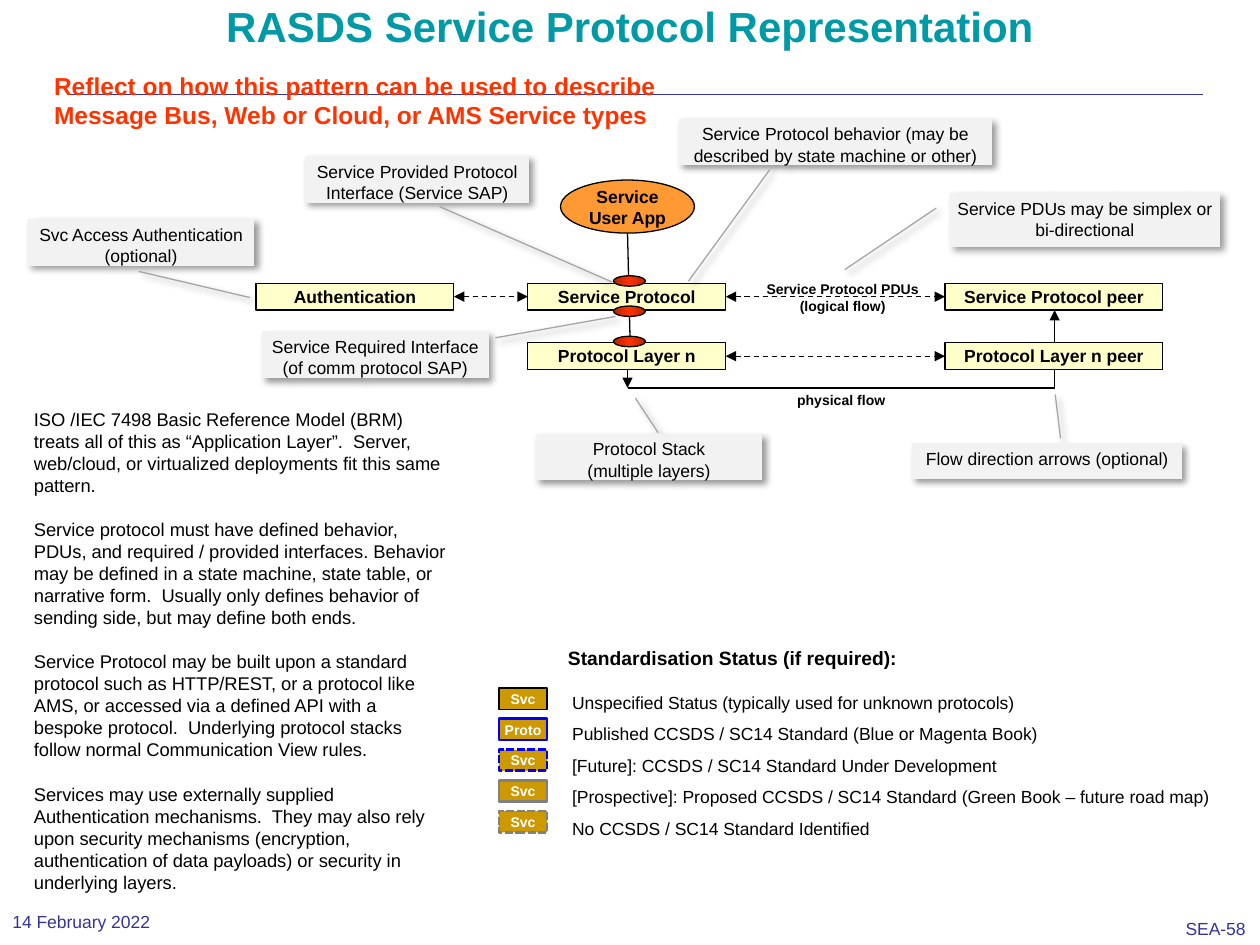
import copy

import pptx
import pptx.dml.color
import pptx.enum.dml
import pptx.enum.shapes
import pptx.enum.text
import pptx.oxml
import pptx.oxml.ns
import pptx.oxml.xmlchemy
import pptx.util

Cm, Pt = pptx.util.Cm, pptx.util.Pt
SHAPE = pptx.enum.shapes.MSO_SHAPE
DASH = pptx.enum.dml.MSO_LINE.DASH
SHORT_DASH = pptx.enum.dml.MSO_LINE.SQUARE_DOT
ALIGN = pptx.enum.text.PP_ALIGN
ANCHOR = pptx.enum.text.MSO_ANCHOR
qn = pptx.oxml.ns.qn
new_element = pptx.oxml.xmlchemy.OxmlElement

COLORS = {
    "teal": "0099A6", "red": "FF3300", "dark_red": "B62400", "navy": "333399",
    "black": "000000", "white": "FFFFFF", "cream": "FFFFCC", "gold": "CC9900",
    "orange": "FF9933", "blue": "0000FF", "gray": "808080",
    "callout": "F2F2F2", "leader": "A6A6A6",
}

TITLE = "RASDS Service Protocol Representation"
NOTES = [
    "ISO /IEC 7498 Basic Reference Model (BRM) treats all of this as “Application Layer”.  Server, web/cloud, or virtualized deployments fit this same pattern.",
    "Service protocol must have defined behavior, PDUs, and required / provided interfaces. Behavior may be defined in a state machine, state table, or narrative form.  Usually only defines behavior of sending side, but may define both ends.",
    "Service Protocol may be built upon a standard protocol such as HTTP/REST, or a protocol like AMS, or accessed via a defined API with a bespoke protocol.  Underlying protocol stacks follow normal Communication View rules.",
    "Services may use externally supplied Authentication mechanisms.  They may also rely upon security mechanisms (encryption, authentication of data payloads) or security in underlying layers.",
]
STATUSES = [
    ("Svc", "black", 0.75, None, "Unspecified Status (typically used for unknown protocols)"),
    ("Proto", "blue", 1.5, None, "Published CCSDS / SC14 Standard (Blue or Magenta Book)"),
    ("Svc", "blue", 1.5, SHORT_DASH, "[Future]: CCSDS / SC14 Standard Under Development"),
    ("Svc", "gray", 1.5, None, "[Prospective]: Proposed CCSDS / SC14 Standard (Green Book – future road map)"),
    ("Svc", "gray", 1.5, SHORT_DASH, "No CCSDS / SC14 Standard Identified"),
]
COLUMNS = {"auth": (5.16, 3.99), "service": (10.64, 3.99), "peer": (19.05, 4.39)}
ROWS = [5.71, 6.91]
BOX_HEIGHT = 0.54
BOXES = [
    ("Authentication", "auth", 0),
    ("Service Protocol", "service", 0),
    ("Service Protocol peer", "peer", 0),
    ("Protocol Layer n", "service", 1),
    ("Protocol Layer n peer", "peer", 1),
]
LOGICAL_FLOWS = [("auth", "service", 0), ("service", "peer", 0), ("service", "peer", 1)]
STACK_X, PEER_X, PHYSICAL_Y = 12.65, 21.26, 7.82
CALLOUTS = [
    (["Service PDUs may be simplex or bi-directional"], (19.15, 3.89, 5.44, 1.09), (0.28, 1.05, 1.42, 1.39)),
    (["Service Protocol behavior (may be described by state machine or other)"], (13.69, 2.39, 6.3, 0.94), (1.1, 0.71, 3.49, 0.97)),
    (["Service Provided Protocol Interface (Service SAP)"], (6.15, 3.15, 4.52, 0.94), (1.08, 0.4, 2.7, -0.37)),
    (["Service Required Interface (of comm protocol SAP)"], (5.28, 6.68, 4.57, 0.94), (0.14, -0.03, -0.32, -0.56)),
    (["Flow direction arrows (optional)"], (18.39, 8.94, 5.44, 0.71), (-0.14, 0.45, -1.39, 0.47)),
    (["Protocol Stack", "(multiple layers)"], (10.8, 8.74, 4.57, 0.94), (-0.02, 0.46, -0.76, 0.56)),
    (["Svc Access Authentication (optional)"], (0.56, 4.42, 4.57, 0.94), (1.12, 0.51, 1.68, 0.02)),
]
LABELS = [
    (["Reflect on how this pattern can be used to describe Message Bus, Web or Cloud, or AMS Service types"],
     (0.84, 1.3, 12.7, 1.45), dict(size=14, color="red", bold=True)),
    (["Service Protocol PDUs", "(logical flow)"], (15.44, 5.66, 3.1, 0.69),
     dict(size=8, bold=True, inset=0, wrap=False, align=ALIGN.CENTER)),
    (["physical flow"], (15.82, 7.77, 2.31, 0.61), dict(size=8, bold=True, wrap=False)),
    (["Standardisation Status (if required):"], (11.2, 12.9, 7.19, 0.74), dict(size=11, bold=True, wrap=False)),
    (["14 February 2022"], (0, 18.21, 4.8, 0.74), dict(color="navy", anchor=ANCHOR.MIDDLE)),
    (["SEA-58"], (23.65, 18.39, 1.73, 0.66), dict(color="navy", wrap=False)),
]


def rgb(name):
    return pptx.dml.color.RGBColor.from_string(COLORS[name])


def apply(target, values):
    for name, value in values.items():
        setattr(target, name, value)


def place(shape, box):
    apply(shape, dict(zip(("left", "top", "width", "height"), map(Cm, box))))


def write(shape, texts, size=10, color="black", bold=False, align=ALIGN.LEFT,
          anchor=ANCHOR.TOP, inset=None, wrap=True, gap=0, spacing=1.0):
    frame = shape.text_frame
    apply(frame, {"auto_size": pptx.enum.text.MSO_AUTO_SIZE.NONE,
                  "word_wrap": wrap, "vertical_anchor": anchor})
    if inset is not None:
        apply(frame, {f"margin_{side}": Cm(inset) for side in ("left", "top", "right", "bottom")})
    for index, text in enumerate(texts):
        paragraph = frame.paragraphs[0] if index == 0 else frame.add_paragraph()
        apply(paragraph, {"alignment": align, "line_spacing": spacing,
                          "space_before": Pt(gap if index else 0)})
        if shape.is_placeholder:
            properties = paragraph._p.get_or_add_pPr()
            properties.set("marL", "0")
            properties.set("indent", "0")
            properties.append(new_element("a:buNone"))
        run = paragraph.add_run()
        run.text = text
        apply(run.font, {"name": "Arial", "size": Pt(size), "bold": bold})
        run.font.color.rgb = rgb(color)


def outline(line, color="black", width=0.75, dash=None):
    line.color.rgb = rgb(color)
    apply(line, {"width": Pt(width), "dash_style": dash})


def add_shape(slide, kind, box, fill, **line):
    shape = slide.shapes.add_shape(kind, *map(Cm, box))
    shape.shadow.inherit = False
    shape.fill.solid()
    shape.fill.fore_color.rgb = rgb(fill)
    outline(shape.line, **line)
    return shape


def add_line(slide, start, end, arrows=(), **line):
    connector = slide.shapes.add_connector(
        pptx.enum.shapes.MSO_CONNECTOR.STRAIGHT, *map(Cm, start + end))
    outline(connector.line, **line)
    properties = connector._element.spPr
    for arrow in arrows:
        element = new_element(f"a:{arrow}End")
        element.set("type", "triangle")
        properties.find(qn("a:ln")).append(element)
    properties.append(new_element("a:effectLst"))


def add_callout(slide, texts, box, pointer):
    callout = add_shape(slide, SHAPE.LINE_CALLOUT_1_NO_BORDER, box, "callout", color="leader")
    for index, value in enumerate(pointer):
        callout.adjustments[index] = value
    properties = callout._element.spPr
    properties.find(qn("a:xfrm")).set("flipH", "1")
    properties.find(qn("a:effectLst")).append(pptx.oxml.parse_xml(
        f'<a:outerShdw {pptx.oxml.ns.nsdecls("a")} blurRad="50800" dist="38100" dir="2700000" '
        f'algn="tl" rotWithShape="0"><a:srgbClr val="{COLORS["black"]}">'
        '<a:alpha val="40000"/></a:srgbClr></a:outerShdw>'))
    write(callout, texts, align=ALIGN.CENTER, inset=0.1)


def add_access_point(slide, top):
    point = add_shape(slide, SHAPE.OVAL, (12.37, top, 0.64, 0.21), "red")
    point.fill.gradient()
    point.fill.gradient_angle = 0
    stops = point._element.spPr.find(".//" + qn("a:gsLst"))
    stops.insert(1, copy.deepcopy(stops[0]))
    for stop, position, color in zip(point.fill.gradient_stops, (0, 0.5, 1), ("dark_red", "red", "dark_red")):
        stop.position = position
        stop.color.rgb = rgb(color)


def main():
    presentation = pptx.Presentation()
    apply(presentation, {"slide_width": Cm(25.4), "slide_height": Cm(19.05)})
    slide = presentation.slides.add_slide(presentation.slide_layouts[3])
    title, notes, statuses = slide.placeholders
    place(title, (1.27, 0, 22.86, 3.18))
    write(title, [TITLE], size=24, color="teal", bold=True, align=ALIGN.CENTER, spacing=0.9)
    place(notes, (0.43, 8.1, 8.89, 10.13))
    write(notes, NOTES, size=10.5, gap=12.6)
    place(statuses, (11.28, 13.61, 13.44, 3.38))
    write(statuses, [status[-1] for status in STATUSES], spacing=Pt(18), wrap=False)

    add_line(slide, (1.35, 1.9), (24.26, 1.9), color="navy", width=0.13)
    add_line(slide, (STACK_X, 4.7), (12.7, 6.78))
    for source, target, row in LOGICAL_FLOWS:
        y = ROWS[row] + BOX_HEIGHT / 2
        add_line(slide, (sum(COLUMNS[source]), y), (COLUMNS[target][0], y), ("head", "tail"), dash=DASH)
    add_line(slide, (STACK_X, PHYSICAL_Y), (STACK_X, ROWS[1] + BOX_HEIGHT), ("head",))
    add_line(slide, (PEER_X, PHYSICAL_Y), (PEER_X, ROWS[0] + BOX_HEIGHT), ("tail",))
    add_line(slide, (STACK_X, PHYSICAL_Y), (PEER_X, PHYSICAL_Y))

    for text, column, row in BOXES:
        left, width = COLUMNS[column]
        box = add_shape(slide, SHAPE.RECTANGLE, (left, ROWS[row], width, BOX_HEIGHT), "cream")
        write(box, [text], bold=True, align=ALIGN.CENTER, inset=0.05)
    for callout in CALLOUTS:
        add_callout(slide, *callout)
    for index in range(3):
        add_access_point(slide, 5.56 + 0.61 * index)
    user_app = add_shape(slide, SHAPE.OVAL, (11.3, 3.63, 2.7, 1.07), "orange")
    write(user_app, ["Service User App"], bold=True, align=ALIGN.CENTER, anchor=ANCHOR.MIDDLE, inset=0)

    for index, (text, color, width, dash, _) in enumerate(STATUSES):
        badge = add_shape(slide, SHAPE.RECTANGLE, (10.06, 13.87 + 0.62 * index, 0.97, 0.43), "gold",
                          color=color, width=width, dash=dash)
        write(badge, [text], size=8, color="white", bold=True, align=ALIGN.CENTER, inset=0.05)
    for texts, box, style in LABELS:
        write(slide.shapes.add_textbox(*map(Cm, box)), texts, **style)
    presentation.save("out.pptx")


if __name__ == "__main__":
    main()
